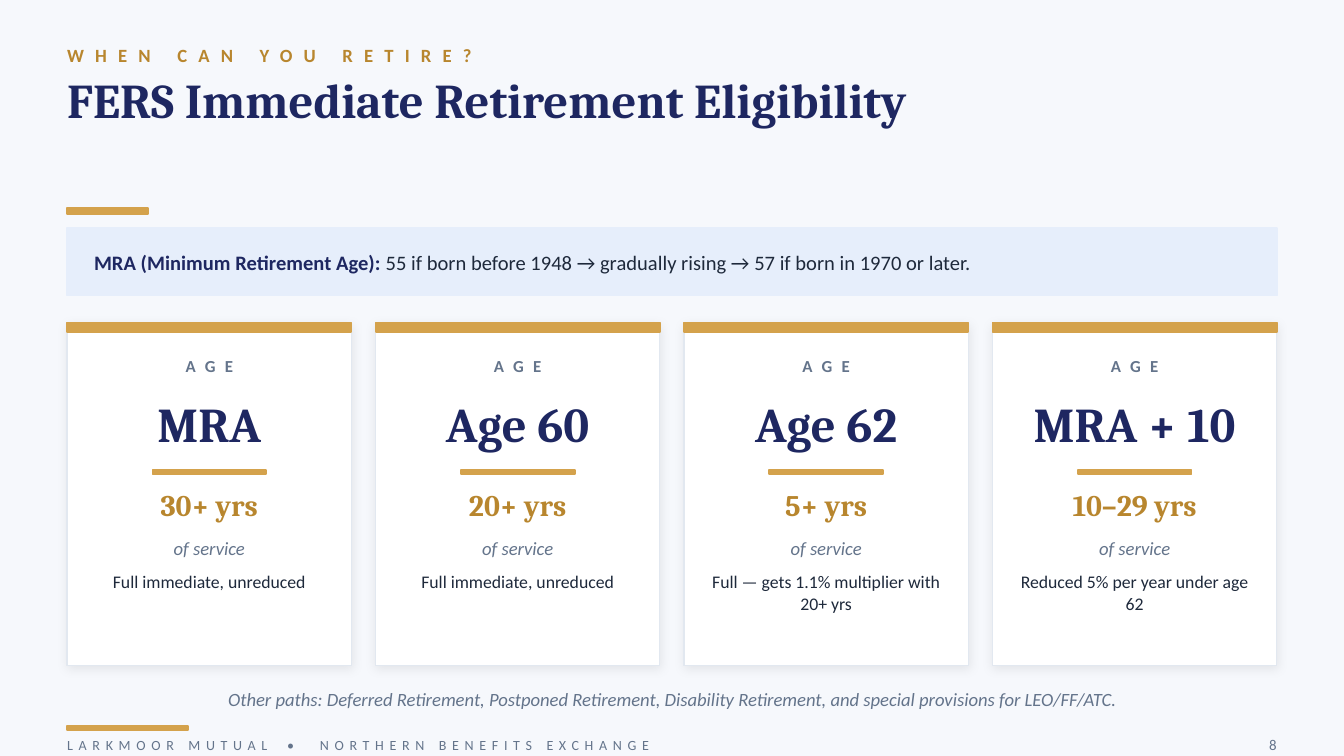
from lxml.etree import SubElement
from pptx import Presentation
from pptx.dml.color import RGBColor
from pptx.enum.shapes import MSO_SHAPE as Shape
from pptx.enum.text import MSO_ANCHOR as Anchor, PP_ALIGN as Align
from pptx.oxml.ns import qn
from pptx.util import Pt

NAVY, GOLD, DARK_GOLD = "1E2761", "D4A24C", "B8862E"
INK, SLATE, PALE_BLUE = "1E293B", "64748B", "E6EEFB"
BACKGROUND, WHITE, CARD_EDGE = "F6F8FC", "FFFFFF", "E2E8F0"
SANS, SERIF = "Calibri", "Cambria"

EYEBROW = "WHEN CAN YOU RETIRE?"
TITLE = "FERS Immediate Retirement Eligibility"
MRA_TERM = "MRA (Minimum Retirement Age):"
MRA_RULE = " 55 if born before 1948 → gradually rising → 57 if born in 1970 or later."
PATHS = [  # age, years of service, outcome
    ("MRA", "30+ yrs", "Full immediate, unreduced"),
    ("Age 60", "20+ yrs", "Full immediate, unreduced"),
    ("Age 62", "5+ yrs", "Full — gets 1.1% multiplier with 20+ yrs"),
    ("MRA + 10", "10–29 yrs", "Reduced 5% per year under age 62"),
]
OTHER_PATHS = ("Other paths: Deferred Retirement, Postponed Retirement, "
               "Disability Retirement, and special provisions for LEO/FF/ATC.")
FOOTER = ("LARKMOOR MUTUAL", "NORTHERN BENEFITS EXCHANGE")
PAGE = "8"

MARGIN, CONTENT_WIDTH = 36, 648
CARD_TOP, CARD_HEIGHT, CARD_GAP = 172.8, 183.6, 12.96
CARD_WIDTH = (CONTENT_WIDTH - CARD_GAP * (len(PATHS) - 1)) / len(PATHS)
RULE_WIDTH = CARD_WIDTH * 0.4
OUTCOME_INSET = 10.8


def rgb(color):
    return RGBColor.from_string(color)


def style(size, color, font=SANS, bold=False, italic=False, spacing=0):
    return dict(size=size, color=color, font=font, bold=bold,
                italic=italic, spacing=spacing)


def add_block(slide, left, top, width, height, fill, edge=None, edge_width=1):
    """Add a flat rectangle, edged in its own fill unless told otherwise."""
    block = slide.shapes.add_shape(
        Shape.RECTANGLE, Pt(left), Pt(top), Pt(width), Pt(height))
    block.shadow.inherit = False
    block.fill.solid()
    block.fill.fore_color.rgb = rgb(fill)
    block.line.color.rgb = rgb(edge or fill)
    block.line.width = Pt(edge_width)
    return block


def add_soft_shadow(block):
    effects = block._element.spPr.find(qn("a:effectLst"))
    shadow = SubElement(effects, qn("a:outerShdw"), blurRad=str(Pt(6)),
                        dist=str(Pt(1.5)), dir="5400000", algn="ctr",
                        rotWithShape="0")
    black = SubElement(shadow, qn("a:srgbClr"), val="000000")
    SubElement(black, qn("a:alpha"), val="8000")


def add_text(slide, left, top, width, height, *pieces,
             align=Align.LEFT, anchor=Anchor.MIDDLE):
    """Add one paragraph made of (text, style) pieces."""
    box = slide.shapes.add_textbox(Pt(left), Pt(top), Pt(width), Pt(height))
    frame = box.text_frame
    frame.word_wrap = True
    frame.vertical_anchor = anchor
    frame.margin_left = frame.margin_right = 0
    frame.margin_top = frame.margin_bottom = 0
    paragraph = frame.paragraphs[0]
    paragraph.alignment = align
    for text, look in pieces:
        run = paragraph.add_run()
        run.text = text
        run.font.name = look["font"]
        run.font.size = Pt(look["size"])
        run.font.bold = look["bold"]
        run.font.italic = look["italic"]
        run.font.color.rgb = rgb(look["color"])
        if look["spacing"]:
            run._r.get_or_add_rPr().set("spc", str(look["spacing"] * 100))


def add_card(slide, left, age, years, outcome):
    card = add_block(slide, left, CARD_TOP, CARD_WIDTH, CARD_HEIGHT,
                     WHITE, CARD_EDGE, 0.75)
    add_soft_shadow(card)
    add_block(slide, left, CARD_TOP, CARD_WIDTH, 5.04, GOLD)
    add_block(slide, left + (CARD_WIDTH - RULE_WIDTH) / 2, 252,
              RULE_WIDTH, 2.16, GOLD)
    lines = [  # top, height, text, style
        (187.2, 18, "AGE", style(9, SLATE, bold=True, spacing=5)),
        (205.2, 43.2, age, style(26, NAVY, SERIF, bold=True)),
        (257.76, 25.2, years, style(16, DARK_GOLD, SERIF, bold=True)),
        (284.4, 18, "of service", style(10, SLATE, italic=True)),
    ]
    for top, height, text, look in lines:
        add_text(slide, left, top, CARD_WIDTH, height, (text, look),
                 align=Align.CENTER)
    add_text(slide, left + OUTCOME_INSET, 306, CARD_WIDTH - 2 * OUTCOME_INSET,
             46.8, (outcome, style(9.5, INK)),
             align=Align.CENTER, anchor=Anchor.TOP)


def main():
    deck = Presentation()
    deck.slide_width, deck.slide_height = Pt(720), Pt(405)
    slide = deck.slides.add_slide(deck.slide_layouts[6])
    slide.background.fill.solid()
    slide.background.fill.fore_color.rgb = rgb(BACKGROUND)

    add_text(slide, MARGIN, 20.16, CONTENT_WIDTH, 18.72,
             (EYEBROW, style(10, DARK_GOLD, bold=True, spacing=6)))
    add_text(slide, MARGIN, 37.44, 662.4, 72,
             (TITLE, style(26, NAVY, SERIF, bold=True)), anchor=Anchor.TOP)
    add_block(slide, MARGIN, 111.6, 43.2, 2.88, GOLD)

    add_block(slide, MARGIN, 122.4, CONTENT_WIDTH, 36, PALE_BLUE)
    add_text(slide, MARGIN + 14.4, 122.4, CONTENT_WIDTH - 28.8, 36,
             (MRA_TERM, style(11, NAVY, bold=True)),
             (MRA_RULE, style(11, INK)))

    for index, path in enumerate(PATHS):
        add_card(slide, MARGIN + index * (CARD_WIDTH + CARD_GAP), *path)

    add_text(slide, MARGIN, 363.6, CONTENT_WIDTH, 21.6,
             (OTHER_PATHS, style(10, SLATE, italic=True)), align=Align.CENTER)
    add_block(slide, MARGIN, 389.16, 64.8, 2.16, GOLD)
    company, exchange = FOOTER
    footer_style = style(7.5, SLATE, spacing=3)
    add_text(slide, MARGIN, 392.4, 432, 12.96, (company, footer_style),
             (" • ", style(7.5, SLATE, spacing=6)), (exchange, footer_style))
    add_text(slide, 648, 392.4, 36, 12.96, (PAGE, style(8, SLATE)),
             align=Align.RIGHT)
    deck.save("out.pptx")


if __name__ == "__main__":
    main()
